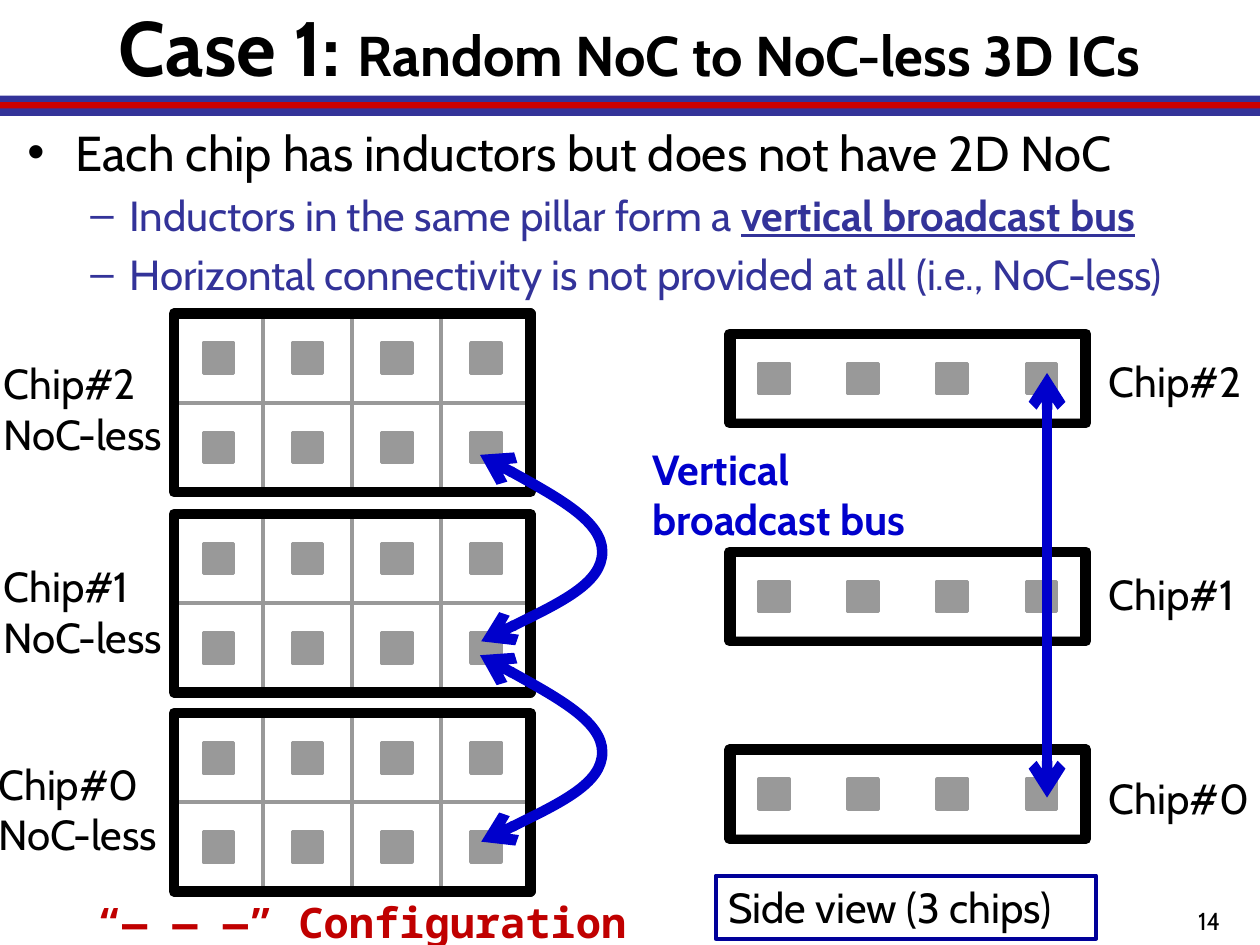
from lxml import etree
from pptx import Presentation
from pptx.dml.color import RGBColor
from pptx.enum.shapes import MSO_CONNECTOR, MSO_SHAPE
from pptx.enum.text import MSO_ANCHOR, MSO_AUTO_SIZE, PP_ALIGN
from pptx.oxml.ns import qn
from pptx.util import Inches, Pt

RECT, STRAIGHT = MSO_SHAPE.RECTANGLE, MSO_CONNECTOR.STRAIGHT
MIDDLE, CENTER, NO_FIT = MSO_ANCHOR.MIDDLE, PP_ALIGN.CENTER, MSO_AUTO_SIZE.NONE
COLORS = {"black": "000000", "white": "FFFFFF", "indigo": "333399", "red": "CC0000",
          "bus": "0000CC", "navy": "000099", "caption": "C00000"}
FONT, MONO = "Cabin", "Noto Sans Mono"

# Grid: square cells, four to a row, with an inductor in the middle of each
CELL = 2.83 / 4
INDUCTOR = 0.24
INSET = (CELL - INDUCTOR) / 2
COLUMNS, ROWS = 4, 2
PLAN_LEFT, SIDE_LEFT = 1.38, 5.79

deck = Presentation()
deck.slide_width, deck.slide_height = Inches(10), Inches(7.5)
page = deck.slides.add_slide(deck.slide_layouts[5])


def add_box(left, top, width, height, fill=None, line=None, points=2, opacity=None):
    """Add a rectangle with an optional fill, outline and fill opacity in percent."""
    box = page.shapes.add_shape(RECT, Inches(left), Inches(top), Inches(width), Inches(height))
    box.shadow.inherit = False
    if fill:
        box.fill.solid()
        box.fill.fore_color.rgb = RGBColor.from_string(COLORS[fill])
    else:
        box.fill.background()
    if opacity:
        color = box.fill._xPr.find(".//" + qn("a:srgbClr"))
        etree.SubElement(color, qn("a:alpha"), val=str(opacity * 1000))
    if line:
        box.line.color.rgb = RGBColor.from_string(COLORS[line])
        box.line.width = Pt(points)
        etree.SubElement(box.line._get_or_add_ln(), qn("a:round"))
    else:
        box.line.fill.background()
    return box


def add_text(left, top, width, height, lines, size=24, color="black", font=FONT, bold=False):
    """Add a text box; each line is a list of (text, bold and underlined) pairs or a string."""
    box = page.shapes.add_textbox(Inches(left), Inches(top), Inches(width), Inches(height))
    frame = box.text_frame
    frame.word_wrap = True
    for index, line in enumerate(lines):
        para = frame.paragraphs[0] if index == 0 else frame.add_paragraph()
        for text, strong in [(line, False)] if isinstance(line, str) else line:
            span = para.add_run()
            span.text = text
            span.font.name, span.font.size = font, Pt(size)
            span.font.bold = bold or strong
            span.font.underline = strong
            span.font.color.rgb = RGBColor.from_string(COLORS[color])
    return box


# Title
title = page.shapes.title
title.left, title.top = Inches(0), Inches(-0.03)
title.width, title.height = Inches(10), Inches(0.79)
title.text_frame.auto_size = NO_FIT
title.text_frame.vertical_anchor = MIDDLE
para = title.text_frame.paragraphs[0]
para.alignment = CENTER
for text, size in [("Case 1: ", 44), ("Random NoC to NoC-less 3D ICs", 32)]:
    span = para.add_run()
    span.text = text
    span.font.name, span.font.size, span.font.bold = FONT, Pt(size), True
    span.font.color.rgb = RGBColor.from_string(COLORS["black"])

# Striped rule under the title
add_box(0, 0.76, 10, 0.16, "indigo")
add_box(0, 0.81, 10, 0.05, "red")

# Bulleted statements
body = add_text(0.12, 0.92, 9.96, 1.57, [
    "Each chip has inductors but does not have 2D NoC",
    [("Inductors in the same pillar form a ", False), ("vertical broadcast bus", True)],
    "Horizontal connectivity is not provided at all (i.e., NoC-less)"], color="indigo")
for index, para in enumerate(body.text_frame.paragraphs):
    bullet, margin, hanging = ("–", 0.81, 0.31) if index else ("•", 0.38, 0.38)
    para.level = min(index, 1)
    props = para._p.get_or_add_pPr()
    props.set("marL", str(Inches(margin)))
    props.set("indent", str(-Inches(hanging)))
    before = etree.SubElement(props, qn("a:spcBef"))
    etree.SubElement(before, qn("a:spcPct"), val="20000")
    etree.SubElement(props, qn("a:buFont"), typeface="Arial")
    etree.SubElement(props, qn("a:buChar"), char=bullet)
lead = body.text_frame.paragraphs[0].runs[0].font
lead.size, lead.color.rgb = Pt(28), RGBColor.from_string(COLORS["black"])

# Plan view: a grid of cells per chip, veiled to grey, inside a heavy frame
for name, top, label_left, label_top in [("Chip#0", 5.66, -0.11, 5.97),
                                         ("Chip#1", 4.08, -0.07, 4.4),
                                         ("Chip#2", 2.49, -0.07, 2.79)]:
    for column in range(COLUMNS):
        for row in range(ROWS):
            x, y = PLAN_LEFT + column * CELL, top + row * CELL
            add_box(x, y, CELL, CELL, "white", "black")
            add_box(x + INSET, y + INSET, INDUCTOR, INDUCTOR, "black", "black")
    for fill, points, opacity in [("white", 2, 60), (None, 6, None)]:
        add_box(PLAN_LEFT, top, COLUMNS * CELL, ROWS * CELL, fill, "black", points, opacity)
    add_text(label_left, label_top, 2.1, 0.91, [name, "NoC-less"])

# Side view: one row of inductors per chip
for name, top, label_top in [("Chip#2", 2.65, 2.77), ("Chip#1", 4.38, 4.46),
                             ("Chip#0", 5.95, 6.08)]:
    for column in range(COLUMNS):
        add_box(SIDE_LEFT + column * CELL + INSET, top + INSET, INDUCTOR, INDUCTOR,
                "black", "black")
    add_box(SIDE_LEFT, top, COLUMNS * CELL, CELL, None, "black", 6)
    add_box(SIDE_LEFT + 0.04, top + 0.03, 2.76, 0.66, "white", "black", 2, 60)
    add_text(8.7, label_top, 1.42, 0.5, [name])

# Curved bus arrows between neighbouring chips in the plan view
arrows = []
BENDS = [(4.3, 0.26), (4.78, 0.53), (4.78, 0.77), (4.78, 1.02), (4.3, 1.25), (3.82, 1.48)]
for top in (5.2, 3.61):
    builder = page.shapes.build_freeform(Inches(3.81), Inches(top))
    builder.add_line_segments([(Inches(x), Inches(top + y)) for x, y in BENDS], close=False)
    curve = builder.convert_to_shape()
    curve.shadow.inherit = False
    curve.fill.background()
    # Every three points become one cubic curve
    segments = list(curve._element.iter(qn("a:lnTo")))
    for start in range(0, len(segments), 3):
        cubic = etree.SubElement(segments[start].getparent(), qn("a:cubicBezTo"))
        for segment in segments[start:start + 3]:
            cubic.append(segment[0])
            segment.getparent().remove(segment)
    arrows.append(curve)

# Straight bus arrow through the side view
pillar = page.shapes.add_connector(STRAIGHT, Inches(8.31), Inches(2.96),
                                   Inches(8.31), Inches(6.33))
etree.SubElement(pillar._element.spPr, qn("a:effectLst"))
arrows.append(pillar)
for arrow in arrows:
    arrow.line.color.rgb = RGBColor.from_string(COLORS["bus"])
    arrow.line.width = Pt(6)
    line = arrow.line._get_or_add_ln()
    etree.SubElement(line, qn("a:round"))
    for end in ("a:headEnd", "a:tailEnd"):
        etree.SubElement(line, qn(end), type="arrow")

# Captions and page number
add_box(5.68, 6.95, 3.02, 0.5, "white", "navy", 2.25)
add_text(5.68, 6.95, 3.02, 0.5, ["Side view (3 chips)"])
add_text(5.08, 3.47, 3.59, 0.91, ["Vertical", "broadcast bus"], color="bus", bold=True)
add_text(0.67, 7.07, 4.65, 0.5, ["“― ― ―” Configuration"], color="caption", font=MONO, bold=True)
add_text(9.41, 7.14, 0.68, 0.4, ["14"], size=14)

deck.save("out.pptx")
